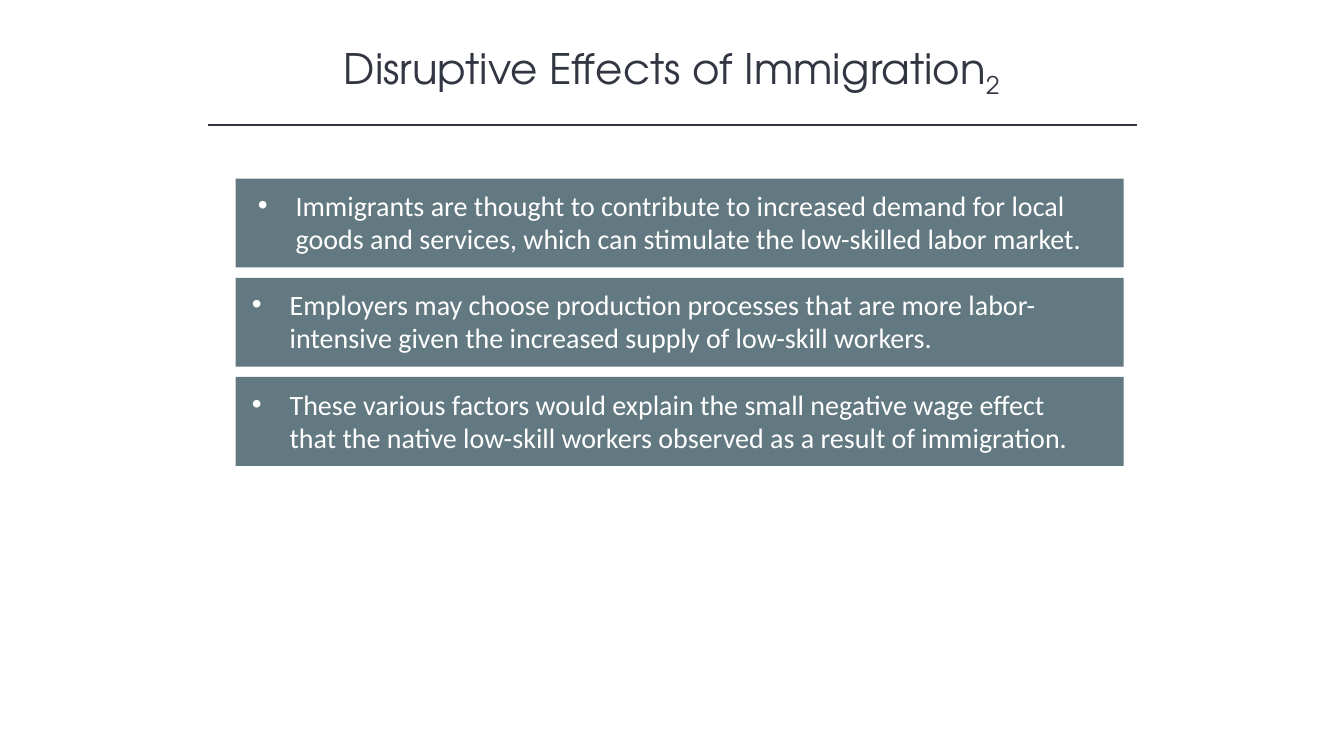
from dataclasses import dataclass

import pptx
import pptx.dml.color
import pptx.enum.shapes
import pptx.enum.text
import pptx.oxml.ns
import pptx.oxml.xmlchemy
import pptx.presentation
import pptx.shapes.autoshape
import pptx.shapes.shapetree
import pptx.slide
import pptx.text.text
import pptx.util
from lxml import etree
from pptx.util import Cm

INK = pptx.dml.color.RGBColor(0x32, 0x35, 0x42)
SLATE = pptx.dml.color.RGBColor(0x62, 0x79, 0x81)
WHITE = pptx.dml.color.RGBColor(0xFF, 0xFF, 0xFF)

TITLE_FORMAT = {"name": "TeX Gyre Adventor", "size": pptx.util.Pt(30)}
POINT_FORMAT = {"name": "Calibri", "size": pptx.util.Pt(20)}

BAND_LEFT, BAND_TOP, BAND_PITCH = 5.94, 4.5, 2.5
BAND_WIDTH, BAND_HEIGHT = 22.38, 2.24
POINT_WIDTH, POINT_HEIGHT = 21.69, 1.96
POINT_INDENT = Cm(0.95)


@dataclass(frozen=True)
class Point:
    """One argument, with the place of its text in centimetres."""

    text: str
    left: float
    top: float


POINTS = (
    Point(
        "Immigrants are thought to contribute to increased demand for local "
        "goods and services, which can stimulate the low-skilled labor market.",
        6.25, 4.62,
    ),
    Point(
        "Employers may choose production processes that are more "
        "labor-intensive given the increased supply of low-skill workers.",
        6.1, 7.11,
    ),
    Point(
        "These various factors would explain the small negative wage effect "
        "that the native low-skill workers observed as a result of immigration.",
        6.1, 9.63,
    ),
)


def add_run(
    paragraph: pptx.text.text._Paragraph,
    text: str,
    color: pptx.dml.color.RGBColor,
    font_format: dict,
) -> pptx.text.text._Run:
    run = paragraph.add_run()
    run.text = text
    for attribute, value in font_format.items():
        setattr(run.font, attribute, value)
    run.font.color.rgb = color
    return run


def add_title(slide: pptx.slide.Slide) -> None:
    title = slide.shapes.add_textbox(Cm(4.23), Cm(0.94), Cm(25.4), Cm(1.55))
    title.text_frame.word_wrap = True
    heading = title.text_frame.paragraphs[0]
    heading.alignment = pptx.enum.text.PP_ALIGN.CENTER
    add_run(heading, "Disruptive Effects of Immigration", INK, TITLE_FORMAT)
    part_number = add_run(heading, "2", INK, TITLE_FORMAT)
    part_number.font._element.set("baseline", "-25000")


def add_rule(slide: pptx.slide.Slide) -> None:
    rule = slide.shapes.add_connector(
        pptx.enum.shapes.MSO_CONNECTOR.STRAIGHT,
        Cm(5.23), Cm(3.15), Cm(28.65), Cm(3.15),
    )
    rule.line.color.rgb = INK
    rule.line.width = pptx.util.Pt(1)
    etree.SubElement(rule._element.spPr, pptx.oxml.ns.qn("a:effectLst"))


def add_slate_box(
    shapes: pptx.shapes.shapetree.GroupShapes,
    left: float, top: float, width: float, height: float,
) -> pptx.shapes.autoshape.Shape:
    box = shapes.add_shape(
        pptx.enum.shapes.MSO_SHAPE.RECTANGLE,
        Cm(left), Cm(top), Cm(width), Cm(height),
    )
    box.shadow.inherit = False
    box.fill.solid()
    box.fill.fore_color.rgb = SLATE
    box.line.fill.background()
    return box


def add_bullet(paragraph: pptx.text.text._Paragraph) -> None:
    properties = paragraph._p.get_or_add_pPr()
    properties.set("marL", str(POINT_INDENT))
    properties.set("indent", str(-POINT_INDENT))
    etree.SubElement(properties, pptx.oxml.ns.qn("a:buFont"), typeface="Arial")
    etree.SubElement(properties, pptx.oxml.ns.qn("a:buChar"), char="•")


def add_point(slide: pptx.slide.Slide, point: Point, band_top: float) -> None:
    """Draw a band and, grouped with it, the box that holds the text."""
    group = slide.shapes.add_group_shape()
    add_slate_box(group.shapes, BAND_LEFT, band_top, BAND_WIDTH, BAND_HEIGHT)
    statement = add_slate_box(
        group.shapes, point.left, point.top, POINT_WIDTH, POINT_HEIGHT
    )
    frame = statement.text_frame
    frame.word_wrap = True
    frame.vertical_anchor = pptx.enum.text.MSO_ANCHOR.TOP
    paragraph = frame.paragraphs[0]
    paragraph.alignment = pptx.enum.text.PP_ALIGN.LEFT
    add_bullet(paragraph)
    add_run(paragraph, point.text, WHITE, POINT_FORMAT)


def main() -> None:
    deck = pptx.Presentation()
    deck.slide_width, deck.slide_height = Cm(33.87), Cm(19.05)
    slide = deck.slides.add_slide(deck.slide_layouts[6])
    add_title(slide)
    add_rule(slide)
    for row, point in enumerate(POINTS):
        add_point(slide, point, BAND_TOP + row * BAND_PITCH)
    deck.save("out.pptx")


if __name__ == "__main__":
    main()
